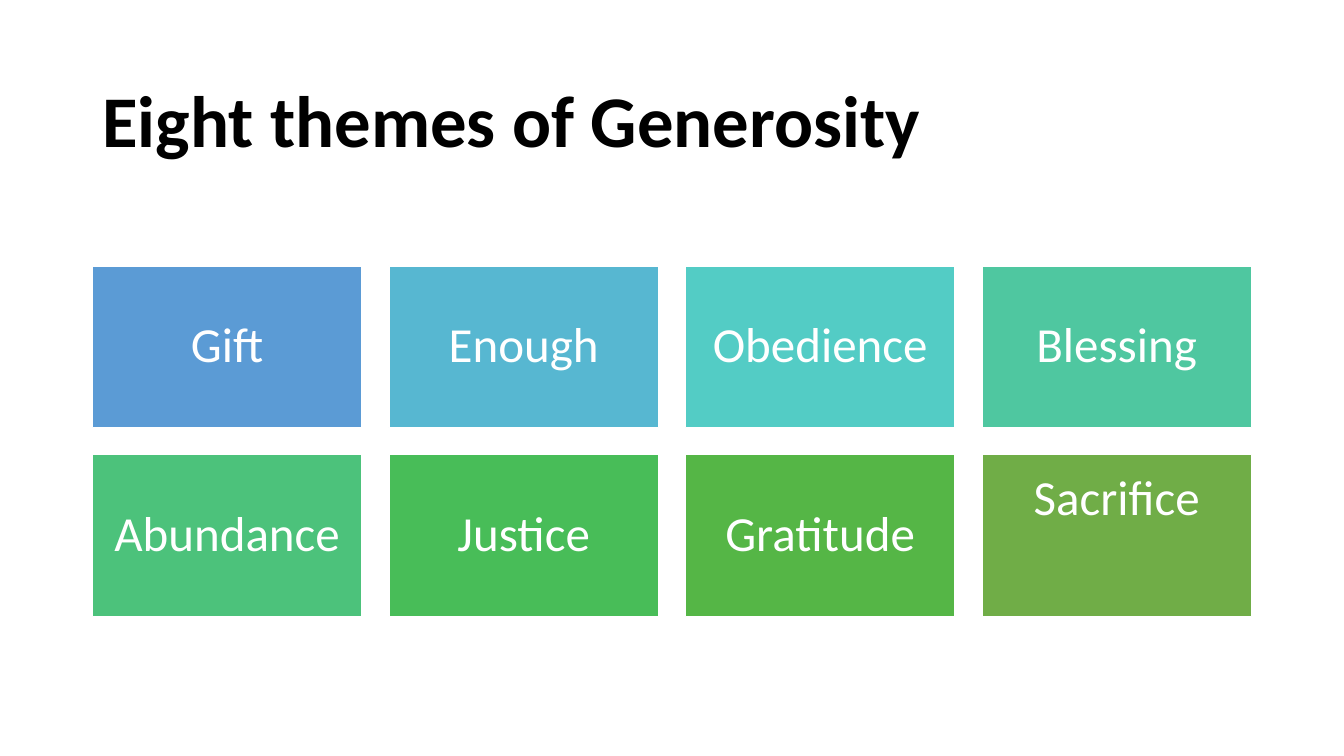
from pptx import Presentation
from pptx.dml.color import RGBColor
from pptx.enum.shapes import MSO_SHAPE
from pptx.enum.text import MSO_ANCHOR, PP_ALIGN
from pptx.util import Pt

TITLE = "Eight themes of Generosity"
THEMES = [
    ("Gift", "5B9BD5"),
    ("Enough", "57B7D1"),
    ("Obedience", "53CCC5"),
    ("Blessing", "4FC7A0"),
    ("Abundance", "4CC27B"),
    ("Justice", "48BD58"),
    ("Gratitude", "55B646"),
    ("Sacrifice", "70AD47"),
]
RAISED_THEME = "Sacrifice"
FONT = "Calibri"
COLUMNS = 4
LEFT, GRID_TOP, GRID_WIDTH = 66, 190, 828
TILE_WIDTH = GRID_WIDTH / (COLUMNS + (COLUMNS - 1) * 0.1)
TILE_HEIGHT = TILE_WIDTH * 0.6
GAP = TILE_WIDTH * 0.1
INSET = 10.8


def color(value):
    return RGBColor.from_string(value)


def write(frame, text, size, text_color, bold=False, align=PP_ALIGN.LEFT):
    frame.word_wrap = True
    frame.vertical_anchor = MSO_ANCHOR.MIDDLE
    para = frame.paragraphs[0]
    para.alignment = align
    para.line_spacing = 0.9
    span = para.add_run()
    span.text = text
    span.font.name = FONT
    span.font.size = Pt(size)
    span.font.bold = bold
    span.font.color.rgb = color(text_color)


def add_tile(page, index, theme, fill):
    row, column = divmod(index, COLUMNS)
    tile = page.shapes.add_shape(
        MSO_SHAPE.RECTANGLE,
        Pt(LEFT + column * (TILE_WIDTH + GAP)),
        Pt(GRID_TOP + row * (TILE_HEIGHT + GAP)),
        Pt(TILE_WIDTH),
        Pt(TILE_HEIGHT),
    )
    tile.shadow.inherit = False
    tile.fill.solid()
    tile.fill.fore_color.rgb = color(fill)
    tile.line.color.rgb = color("FFFFFF")
    tile.line.width = Pt(1)
    frame = tile.text_frame
    frame.margin_left = frame.margin_right = Pt(INSET)
    frame.margin_top = frame.margin_bottom = Pt(INSET)
    write(frame, theme, 35, "FFFFFF", align=PP_ALIGN.CENTER)
    if theme == RAISED_THEME:
        frame.vertical_anchor = MSO_ANCHOR.TOP
        frame.margin_top = Pt(13.5)


def main():
    deck = Presentation()
    deck.slide_width, deck.slide_height = Pt(960), Pt(540)
    page = deck.slides.add_slide(deck.slide_layouts[5])
    title = page.shapes.title
    title.left, title.top = Pt(LEFT), Pt(44)
    title.width, title.height = Pt(GRID_WIDTH), Pt(89)
    write(title.text_frame, TITLE, 52, "000000", bold=True)
    for index, (theme, fill) in enumerate(THEMES):
        add_tile(page, index, theme, fill)
    deck.save("out.pptx")


if __name__ == "__main__":
    main()
